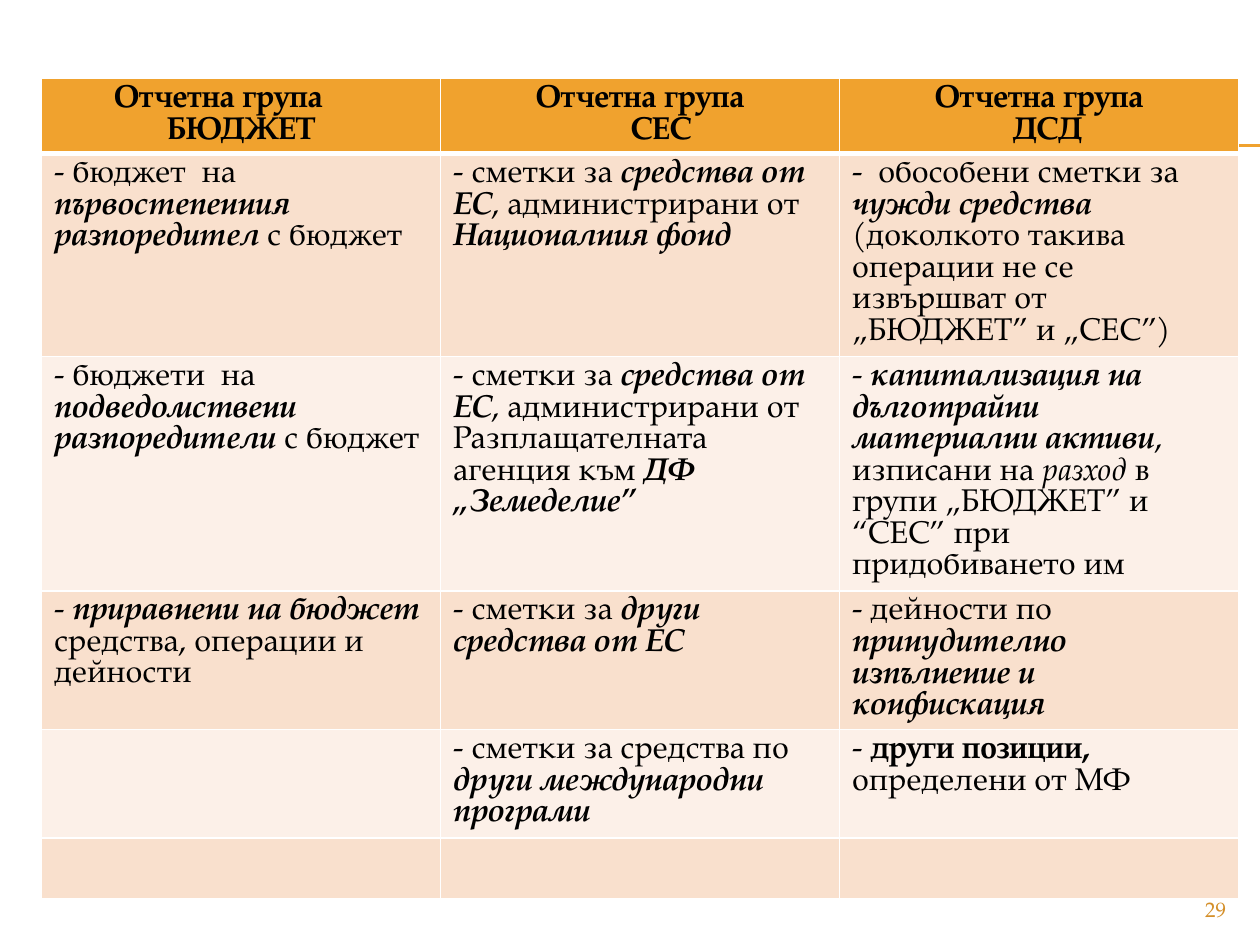
"""Build a slide with a table of the three reporting groups and their contents."""
from lxml.etree import SubElement
from pptx import Presentation
from pptx.dml.color import RGBColor
from pptx.enum.text import MSO_ANCHOR, PP_ALIGN
from pptx.oxml import parse_xml
from pptx.oxml.ns import nsdecls, qn
from pptx.util import Inches, Pt

THEME = {
    "font": "TeX Gyre Pagella",
    "text": "000000",
    "accent": "F0A22E",
    "number": "D48F29",
    "border": "FFFFFF",
    "bands": ("F9E0CD", "FCF0E8"),
    "body_size": 18,
    "number_size": 12,
}

HEADERS = [
    [("Отчетна група", 0, 0.36), ("БЮДЖЕТ", 0, 0)],
    [("Отчетна група", 0, 0), ("СЕС", 0.33, 0)],
    [("Отчетна група", 0, 0), ("ДСД", 0.13, 0)],
]
ROWS = [
    [
        [("- бюджет  на ", ""), ("първостепенния разпоредител", "bi"), (" с бюджет", "")],
        [("- сметки за ", ""), ("средства от ЕС", "bi"), (", администрирани от ", ""),
         ("Националния фонд", "bi")],
        [("-  обособени сметки за ", ""), ("чужди средства ", "bi"),
         ("(доколкото такива операции не се извършват от „БЮДЖЕТ” и „СЕС”)", "")],
    ],
    [
        [("- бюджети  на ", ""), ("подведомствени разпоредители", "bi"), (" с бюджет", "")],
        [("- сметки за ", ""), ("средства от ЕС", "bi"),
         (", администрирани от Разплащателната агенция към ", ""), ("ДФ „Земеделие”", "bi")],
        [("- ", ""), ("капитализация на дълготрайни материални активи", "bi"),
         (", изписани на ", ""), ("разход", "i"),
         (" в групи „БЮДЖЕТ” и “СЕС” при придобиването им", "")],
    ],
    [
        [("- ", ""), ("приравнени на бюджет ", "bi"), ("средства, операции и дейности", "")],
        [("- сметки за ", ""), ("други средства от ЕС", "bi")],
        [("- дейности по ", ""), ("принудително изпълнение и конфискация", "bi")],
    ],
    [
        [],
        [("- сметки за средства по ", ""), ("други международни програми", "bi")],
        [("- ", ""), ("други позиции, ", "b"), ("определени от МФ", "")],
    ],
    [[], [], []],
]
ROW_HEIGHTS = (0.58, 1.61, 1.86, 1.1, 0.86, 0.48)
TABLE_LEFT, TABLE_TOP, TABLE_WIDTH = 0.33, 0.62, 9.5
RULE_LEFT, RULE_RIGHT, RULE_YS = 0.56, 10, (1.15, 1.16)
PAGE_NUMBER = "29"


def add_run(p, text, style="", size=THEME["body_size"], color=THEME["text"]):
    r = p.add_run()
    r.text = text
    r.font.name = THEME["font"]
    r.font.size = Pt(size)
    r.font.bold = "b" in style
    r.font.italic = "i" in style
    r.font.color.rgb = RGBColor.from_string(color)


def format_cell(cell, fill, top, bottom):
    cell.fill.solid()
    cell.fill.fore_color.rgb = RGBColor.from_string(fill)
    cell.vertical_anchor = MSO_ANCHOR.TOP
    edges = (("lnL", 1), ("lnR", 1), ("lnT", top), ("lnB", bottom))
    for i, (tag, width) in enumerate(edges):
        cell._tc.get_or_add_tcPr().insert(i, parse_xml(
            f'<a:{tag} {nsdecls("a")} w="{Pt(width)}"><a:solidFill>'
            f'<a:srgbClr val="{THEME["border"]}"/></a:solidFill></a:{tag}>'))


def add_rules(s):
    for y in RULE_YS:
        rule = s.shapes.add_connector(
            1, Inches(RULE_LEFT), Inches(y), Inches(RULE_RIGHT), Inches(y))
        rule.line.color.rgb = RGBColor.from_string(THEME["accent"])
        rule.line.width = Pt(0.75)
        SubElement(rule._element.spPr, qn("a:effectLst"))


def fill_header(cell, lines):
    tf = cell.text_frame
    for i, (text, left, right) in enumerate(lines):
        p = tf.add_paragraph() if i else tf.paragraphs[0]
        p.alignment = PP_ALIGN.CENTER
        p.line_spacing = Pt(THEME["body_size"])
        pPr = p._p.get_or_add_pPr()
        pPr.set("marL", str(Inches(left)))
        pPr.set("marR", str(Inches(right)))
        add_run(p, text, "b")


def add_groups_table(s):
    table = s.shapes.add_table(
        len(ROW_HEIGHTS), len(HEADERS), Inches(TABLE_LEFT), Inches(TABLE_TOP),
        Inches(TABLE_WIDTH), Inches(sum(ROW_HEIGHTS))).table
    for row, height in zip(table.rows, ROW_HEIGHTS):
        row.height = Inches(height)
    for col, lines in enumerate(HEADERS):
        cell = table.cell(0, col)
        format_cell(cell, THEME["accent"], 1, 3)
        fill_header(cell, lines)
    for i, row in enumerate(ROWS):
        for col, runs in enumerate(row):
            cell = table.cell(i + 1, col)
            format_cell(cell, THEME["bands"][i % 2], 1 if i else 3, 1)
            p = cell.text_frame.paragraphs[0]
            p.line_spacing = Pt(THEME["body_size"])
            for text, style in runs:
                add_run(p, text, style)


def add_page_number(s):
    sp = s.shapes.add_textbox(Inches(9), Inches(7.08), Inches(0.83), Inches(0.27))
    tf = sp.text_frame
    tf.word_wrap = True
    tf.vertical_anchor = MSO_ANCHOR.MIDDLE
    p = tf.paragraphs[0]
    p.alignment = PP_ALIGN.RIGHT
    add_run(p, PAGE_NUMBER, size=THEME["number_size"], color=THEME["number"])


def main():
    prs = Presentation()
    prs.slide_width, prs.slide_height = Inches(10), Inches(7.5)
    s = prs.slides.add_slide(prs.slide_layouts[6])
    add_rules(s)
    add_groups_table(s)
    add_page_number(s)
    prs.save("out.pptx")


if __name__ == "__main__":
    main()
